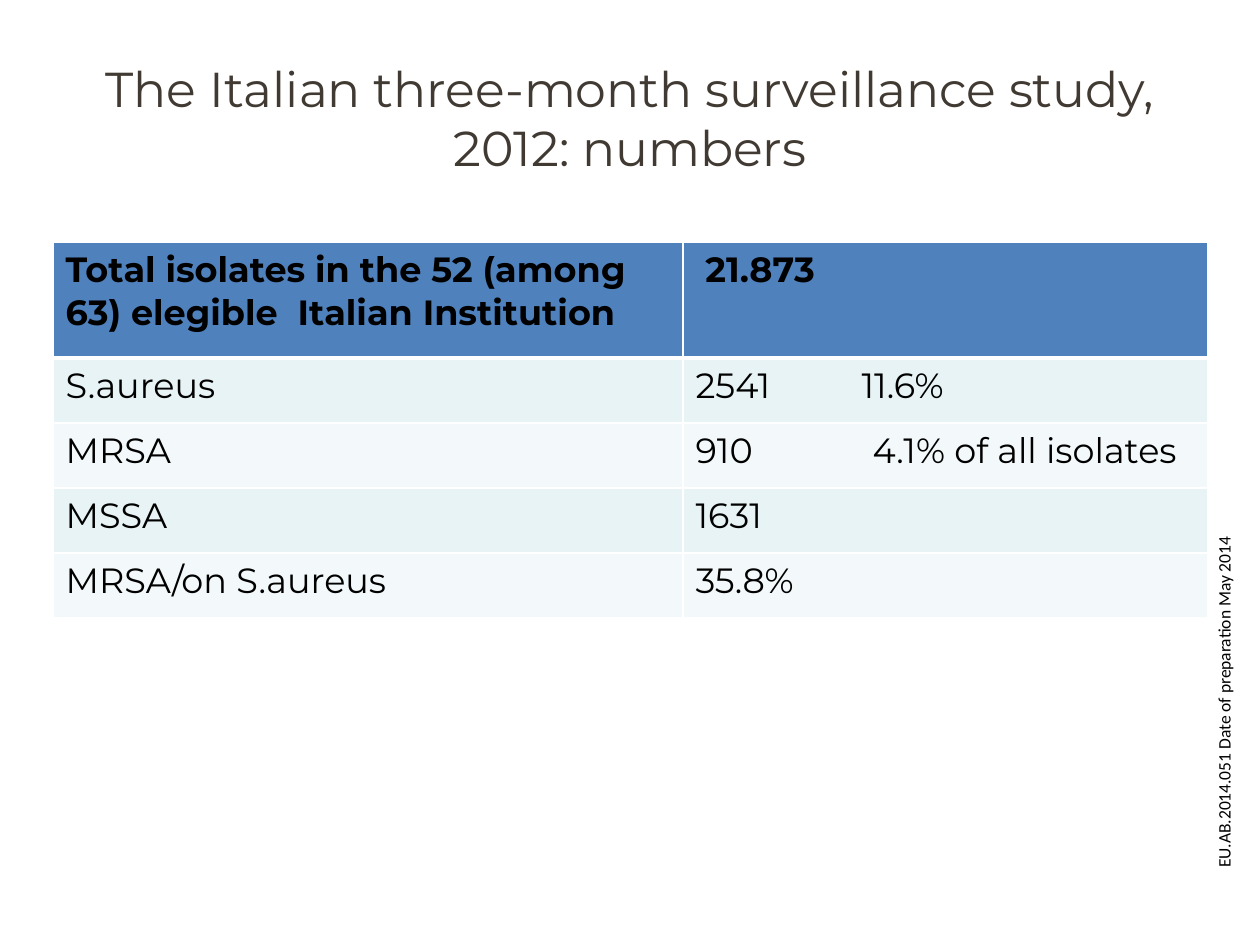
from lxml import etree
from pptx import Presentation, util as u
from pptx.dml.color import RGBColor
from pptx.enum import text
from pptx.oxml import ns

SCALE = 914400 / 126  # EMU per px
HUES = {"ink": "000000", "title": "413A33", "head": "4F81BD",
        "odd": "E7F3F4", "even": "F3F9FA", "rule": "FFFFFF"}


def px(n):
    return u.Emu(round(n * SCALE))


def hue(name):
    return RGBColor.from_string(HUES[name])


def sub(node, tag, **attrs):
    return etree.SubElement(node, ns.qn(tag), attrs)


class Deck:
    font = "Montserrat"

    def __init__(self, wide, high):
        self.prs = Presentation()
        self.prs.slide_width, self.prs.slide_height = px(wide), px(high)
        self.slide = self.prs.slides.add_slide(self.prs.slide_layouts[6])

    def style(self, frame, words, size, color="ink", font=None, bold=False):
        frame.text = words
        para = frame.paragraphs[0]
        for run in para.runs:
            run.font.name = font or self.font
            run.font.size = u.Pt(size)
            run.font.bold = bold
            run.font.color.rgb = hue(color)
        return para

    def label(self, box, words, size, wrap=True, vert=None, **look):
        frame = self.slide.shapes.add_textbox(*map(px, box)).text_frame
        frame.word_wrap = wrap
        if vert:
            frame._txBody.bodyPr.set("vert", vert)
        else:
            frame.vertical_anchor = text.MSO_ANCHOR.MIDDLE
        return self.style(frame, words, size, **look)

    def edge(self, cell, top, base):
        props = cell._tc.get_or_add_tcPr()
        sides = {"a:lnL": 1, "a:lnR": 1, "a:lnT": top, "a:lnB": base}
        for spot, (tag, width) in enumerate(sides.items()):
            line = sub(props, tag, w=str(u.Pt(width)))
            sub(sub(line, "a:solidFill"), "a:srgbClr", val=HUES["rule"])
            props.insert(spot, line)  # borders come before the fill

    def table(self, left, top, cols, highs, rows, tabs):
        box = map(px, (left, top, sum(cols), sum(highs)))
        grid = self.slide.shapes.add_table(len(rows), len(cols), *box).table
        for col, wide in zip(grid.columns, cols):
            col.width = px(wide)
        for r, (row, high) in enumerate(zip(rows, highs)):
            grid.rows[r].height = px(high)
            fill = "head" if r == 0 else "odd" if r % 2 else "even"
            for c, words in enumerate(row):
                cell = grid.cell(r, c)
                para = self.style(cell.text_frame, words, 20, bold=r == 0)
                if "\t" in words:
                    stops = sub(para._p.get_or_add_pPr(), "a:tabLst")
                    sub(stops, "a:tab", pos=str(px(tabs[r])), algn="l")
                cell.fill.solid()
                cell.fill.fore_color.rgb = hue(fill)
                self.edge(cell, 3 if r == 1 else 1, 3 if r == 0 else 1)


def main():
    deck = Deck(1260, 945)

    # Side note
    deck.label((1207, 530, 47, 350), "EU.AB.2014.051 Date of preparation May 2014",
               10, wrap=False, vert="vert270", font="Calibri")

    # Title
    title = deck.label((63, 38, 1134, 158),
                       "The Italian three-month surveillance study, 2012: numbers",
                       28, color="title")
    title.alignment = text.PP_ALIGN.CENTER

    # Isolate counts, with tab stops by row
    rows = [
        ("Total isolates in the 52 (among 63) elegible  Italian Institution", " 21.873"),
        ("S.aureus", "2541\t11.6%"),
        ("MRSA", "910\t4.1% of all isolates"),
        ("MSSA", "1631"),
        ("MRSA/on S.aureus", "35.8%"),
    ]
    deck.table(53, 242, (630, 525), [116] + [65] * 4, rows, {1: 166, 2: 177})

    deck.prs.save("out.pptx")


if __name__ == "__main__":
    main()
